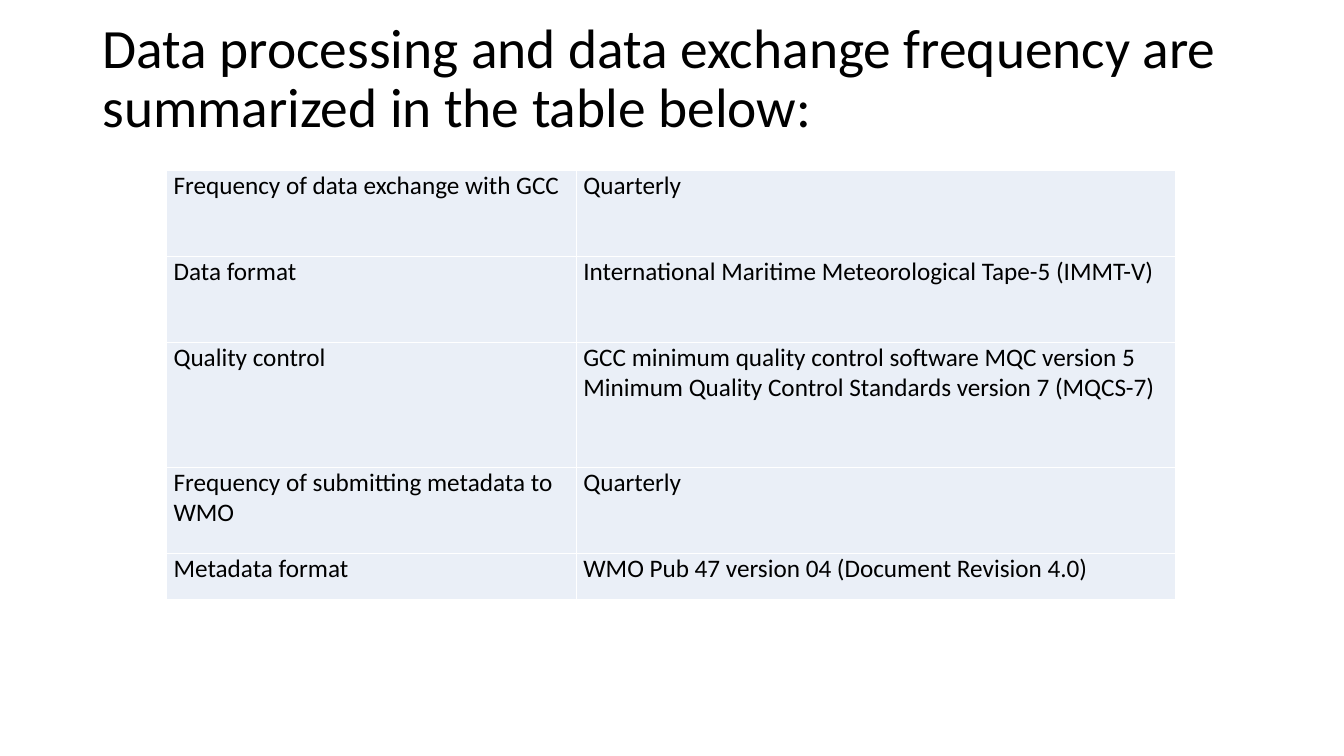
import copy
from dataclasses import dataclass

import pptx
import pptx.dml.color
import pptx.enum.text
import pptx.oxml
import pptx.oxml.ns
import pptx.util

Pt = pptx.util.Pt


@dataclass(frozen=True)
class Theme:
    font: str = "Calibri"
    ink: str = "000000"
    cell_fill: str = "EAEFF7"
    border: str = "FFFFFF"
    border_width: float = 1
    title_size: float = 39.6
    body_size: float = 18


THEME = Theme()
HEADING = "Data processing and data exchange frequency are summarized in the table below:"

# Topic, lines of detail, row height
SUMMARY = [
    ("Frequency of data exchange with GCC", ["Quarterly"], 61.4),
    ("Data format", ["International Maritime Meteorological Tape-5 (IMMT-V)"], 61.4),
    ("Quality control", ["GCC minimum quality control software MQC version 5",
                         "Minimum Quality Control Standards version 7 (MQCS-7)"], 89.3),
    ("Frequency of submitting metadata to WMO", ["Quarterly"], 61.4),
    ("Metadata format", ["WMO Pub 47 version 04 (Document Revision 4.0)"], 32.9),
]
TOPIC_SHARE = 0.406


def color(value):
    return pptx.dml.color.RGBColor.from_string(value)


def add_run(paragraph, text, size):
    run = paragraph.add_run()
    run.text = text
    run.font.name = THEME.font
    run.font.size = Pt(size)
    run.font.color.rgb = color(THEME.ink)
    return run


def set_borders(cell):
    properties = cell._tc.get_or_add_tcPr()
    namespace = pptx.oxml.ns.nsdecls("a")
    for index, side in enumerate(("lnL", "lnR", "lnT", "lnB")):
        properties.insert(index, pptx.oxml.parse_xml(
            f'<a:{side} {namespace} w="{Pt(THEME.border_width)}"><a:solidFill>'
            f'<a:srgbClr val="{THEME.border}"/></a:solidFill></a:{side}>'))


def fill_cell(cell, lines):
    cell.margin_left = cell.margin_right = Pt(5)
    cell.margin_top = cell.margin_bottom = 0
    cell.vertical_anchor = pptx.enum.text.MSO_ANCHOR.TOP
    cell.fill.solid()
    cell.fill.fore_color.rgb = color(THEME.cell_fill)
    set_borders(cell)
    for number, line in enumerate(lines):
        frame = cell.text_frame
        paragraph = frame.add_paragraph() if number else frame.paragraphs[0]
        add_run(paragraph, line, THEME.body_size)


def place_heading(slide, left, top, width, height):
    heading = slide.shapes.title
    heading.left, heading.top = Pt(left), Pt(top)
    heading.width, heading.height = Pt(width), Pt(height)
    frame = heading.text_frame
    frame.word_wrap = True
    frame.auto_size = pptx.enum.text.MSO_AUTO_SIZE.NONE
    frame.vertical_anchor = pptx.enum.text.MSO_ANCHOR.MIDDLE
    paragraph = frame.paragraphs[0]
    paragraph.alignment = pptx.enum.text.PP_ALIGN.LEFT
    paragraph.line_spacing = 0.9
    run = add_run(paragraph, HEADING, THEME.title_size)
    # The closing line break takes the size of the heading
    paragraph.add_line_break()
    run_format = run._r.get_or_add_rPr()
    paragraph._p[-1].append(copy.deepcopy(run_format))
    end_format = copy.deepcopy(run_format)
    end_format.tag = pptx.oxml.ns.qn("a:endParaRPr")
    paragraph._p.append(end_format)


def place_summary(slide, left, top, width):
    height = sum(row_height for _, _, row_height in SUMMARY)
    summary = slide.shapes.add_table(
        len(SUMMARY), 2, Pt(left), Pt(top), Pt(width), Pt(height)).table
    summary.first_row = summary.horz_banding = False
    summary.columns[0].width = Pt(width * TOPIC_SHARE)
    summary.columns[1].width = Pt(width * (1 - TOPIC_SHARE))
    for index, (topic, details, row_height) in enumerate(SUMMARY):
        summary.rows[index].height = Pt(row_height)
        fill_cell(summary.cell(index, 0), [topic])
        fill_cell(summary.cell(index, 1), details)


def build_slide(deck):
    slide = deck.slides.add_slide(deck.slide_layouts.get_by_name("Title Only"))
    place_heading(slide, left=66, top=28.75, width=828, height=104.4)
    place_summary(slide, left=119, top=121.6, width=721)


def main():
    deck = pptx.Presentation()
    deck.slide_width, deck.slide_height = Pt(960), Pt(540)
    build_slide(deck)
    deck.save("out.pptx")


if __name__ == "__main__":
    main()
